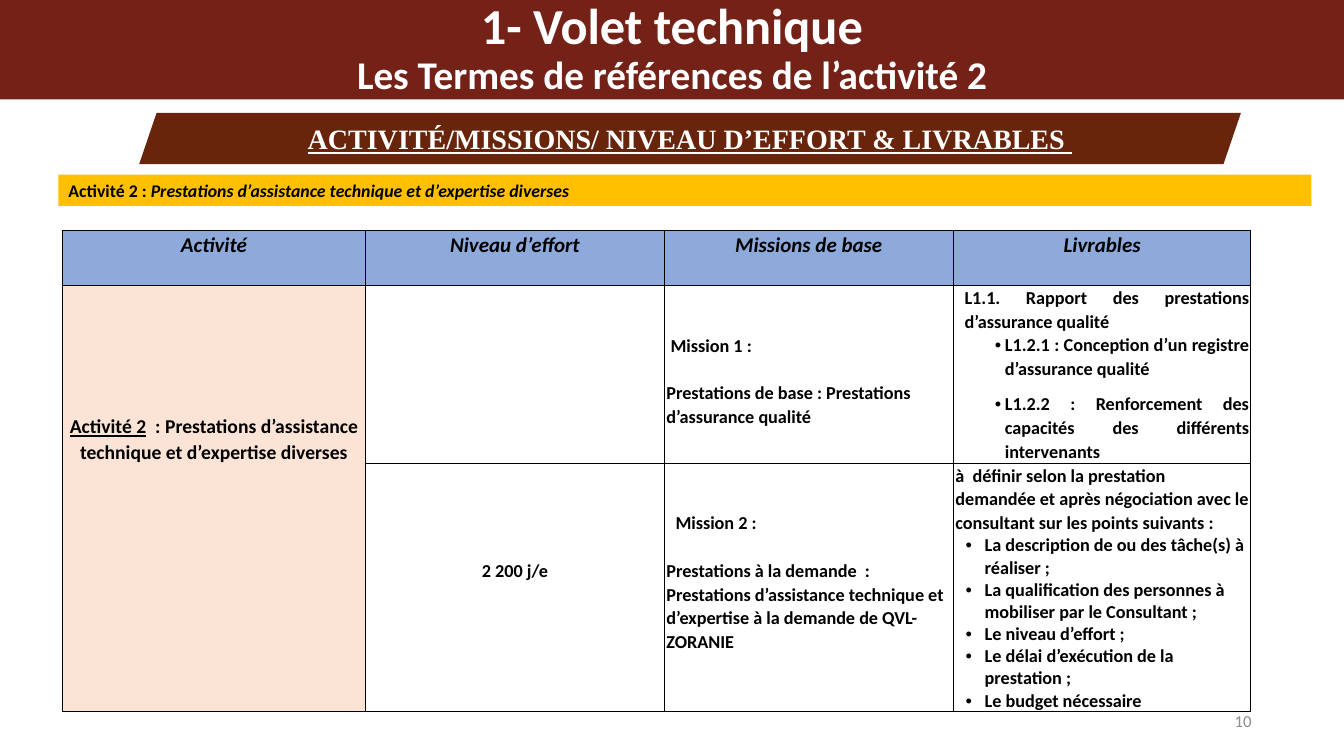
from lxml import etree
from pptx import Presentation
from pptx import util as u
from pptx.dml.color import RGBColor
from pptx.enum import shapes, text
from pptx.oxml import ns

Pt = u.Pt
WHITE = RGBColor(0xFF, 0xFF, 0xFF)
BLACK = RGBColor(0, 0, 0)
GREY = RGBColor(0x8C, 0x8C, 0x8C)
MAROON = RGBColor(0x74, 0x22, 0x17)
BROWN = RGBColor(0x69, 0x24, 0x0C)
AMBER = RGBColor(0xFF, 0xC0, 0x00)
BLUE = RGBColor(0x8E, 0xAA, 0xDB)
PEACH = RGBColor(0xFB, 0xE4, 0xD5)

LEFT = text.PP_ALIGN.LEFT
CENTER = text.PP_ALIGN.CENTER
RIGHT = text.PP_ALIGN.RIGHT
JUSTIFY = text.PP_ALIGN.JUSTIFY
RECTANGLE = shapes.MSO_SHAPE.RECTANGLE
PARALLELOGRAM = shapes.MSO_SHAPE.PARALLELOGRAM


class SlideBuilder:
    font = "Calibri"
    cell_spacing = 1.07

    def __init__(self, slide):
        self.slide = slide

    def para(self, frame, *runs, size=13, color=BLACK, bold=True, italic=False, font=None,
             align=LEFT, spacing=1.0, before=0, after=0, indent=0, hanging=0):
        """Append a paragraph; a run is a string or a (string, font settings) pair.

        A hanging indent also gives the paragraph a bullet.
        """
        first = frame.paragraphs[0]
        para = frame.add_paragraph() if first.runs else first
        para.alignment = align
        para.line_spacing = spacing
        para.space_before, para.space_after = Pt(before), Pt(after)
        props = para._p.get_or_add_pPr()
        props.set("marL", str(Pt(indent)))
        props.set("indent", str(Pt(-hanging)))
        if hanging:
            bullet_font = etree.SubElement(props, ns.qn("a:buFont"))
            bullet_font.set("typeface", "Arial")
            etree.SubElement(props, ns.qn("a:buChar")).set("char", "•")
        for run in runs:
            words, settings = (run, {}) if isinstance(run, str) else run
            span = para.add_run()
            span.text = words
            span.font.name = font or self.font
            span.font.size = Pt(size)
            span.font.bold = bold
            span.font.italic = italic
            span.font.color.rgb = color
            for name, value in settings.items():
                setattr(span.font, name, value)

    def bar(self, kind, left, top, width, height, color):
        """Add a filled shape without outline and return its text frame."""
        shape = self.slide.shapes.add_shape(kind, Pt(left), Pt(top), Pt(width), Pt(height))
        shape.shadow.inherit = False
        shape.fill.solid()
        shape.fill.fore_color.rgb = color
        shape.line.fill.background()
        if kind == PARALLELOGRAM:
            shape.adjustments[0] = 0.34
        frame = shape.text_frame
        frame.word_wrap = True
        frame.vertical_anchor = text.MSO_ANCHOR.MIDDLE
        return frame

    def label(self, left, top, width, height):
        box = self.slide.shapes.add_textbox(Pt(left), Pt(top), Pt(width), Pt(height))
        frame = box.text_frame
        frame.word_wrap = True
        frame.vertical_anchor = text.MSO_ANCHOR.MIDDLE
        frame.margin_left = frame.margin_right = frame.margin_top = frame.margin_bottom = 0
        return frame

    def table(self, left, top, widths, heights):
        holder = self.slide.shapes.add_table(len(heights), len(widths), Pt(left), Pt(top),
                                             Pt(sum(widths)), Pt(sum(heights)))
        table = holder.table
        table.first_row = table.horz_banding = False
        for column, width in zip(table.columns, widths):
            column.width = Pt(width)
        for row, height in zip(table.rows, heights):
            row.height = Pt(height)
        for cell in table.iter_cells():
            cell.margin_left = cell.margin_right = Pt(1.5)
            cell.margin_top = cell.margin_bottom = 0
            cell.fill.background()
            self.border(cell)
        return table

    def border(self, cell):
        props = cell._tc.get_or_add_tcPr()
        for place, side in enumerate(("lnL", "lnR", "lnT", "lnB")):
            line = etree.Element(ns.qn("a:" + side), w=str(Pt(1)))
            fill = etree.SubElement(line, ns.qn("a:solidFill"))
            etree.SubElement(fill, ns.qn("a:srgbClr")).set("val", str(BLACK))
            props.insert(place, line)

    def cell(self, cell, *runs, fill=None, top=None, **style):
        """Append a paragraph to a cell, optionally colouring it and pushing its text down."""
        if fill is not None:
            cell.fill.solid()
            cell.fill.fore_color.rgb = fill
        if top is not None:
            cell.margin_top = Pt(top)
        self.para(cell.text_frame, *runs, **{"spacing": self.cell_spacing, **style})


def add_headings(builder):
    title = builder.bar(RECTANGLE, 0, 0, 960, 71, MAROON)
    for words, size in (("1- Volet technique", 36),
                        ("Les Termes de références de l’activité 2", 28)):
        builder.para(title, words, size=size, color=WHITE, align=CENTER, spacing=0.9)

    banner = builder.bar(PARALLELOGRAM, 99.4, 80.6, 787, 36.7, BROWN)
    builder.para(banner, ("ACTIVITÉ/MISSIONS/ NIVEAU D’EFFORT & LIVRABLES ", {"underline": True}),
                 size=20, color=WHITE, font="Times New Roman", align=CENTER)

    activity = builder.bar(RECTANGLE, 41.8, 124.8, 895, 22.3, AMBER)
    builder.para(activity, "Activité 2 : ",
                 ("Prestations d’assistance technique et d’expertise diverses", {"italic": True}),
                 size=12.7)


def add_missions_table(builder):
    table = builder.table(44.6, 164.5, (216.5, 213.5, 206.5, 212.5), (39.5, 127, 177))
    headers = ("Activité", "Niveau d’effort", "Missions de base", "Livrables")
    for column, header in enumerate(headers):
        builder.cell(table.cell(0, column), header, fill=BLUE, size=15, italic=True, align=CENTER)

    activity = table.cell(1, 0)
    activity.merge(table.cell(2, 0))
    builder.cell(activity, ("Activité 2", {"underline": True}),
                 "  : Prestations d’assistance technique et d’expertise diverses",
                 fill=PEACH, top=91.5, size=14, align=CENTER)
    builder.cell(table.cell(2, 1), "2 200 j/e", top=68, align=CENTER)

    missions = (
        ("Mission 1 :", 3, "Prestations de base : Prestations d’assurance qualité"),
        ("Mission 2 :", 6.5, "Prestations à la demande  : Prestations d’assistance technique et "
                             "d’expertise à la demande de QVL-ZORANIE"),
    )
    for row, (name, indent, content) in enumerate(missions, start=1):
        builder.cell(table.cell(row, 2), name, top=34, indent=indent)
        builder.cell(table.cell(row, 2), content, before=17)

    quality = table.cell(1, 3)
    builder.cell(quality, "L1.1. Rapport des prestations d’assurance qualité",
                 align=JUSTIFY, indent=6.5)
    for words in ("L1.2.1 : Conception d’un registre d’assurance qualité",
                  "L1.2.2 : Renforcement des capacités des différents intervenants"):
        builder.cell(quality, words, align=JUSTIFY, indent=35.3, hanging=7.2, after=8)

    on_demand = table.cell(2, 3)
    builder.cell(on_demand, "à  définir selon la prestation demandée et après négociation avec "
                            "le consultant sur les points suivants :")
    for words in ("La description de ou des tâche(s) à réaliser ;",
                  "La qualification des personnes à mobiliser par le Consultant ;",
                  "Le niveau d’effort ;",
                  "Le délai d’exécution de la prestation ;",
                  "Le budget nécessaire"):
        builder.cell(on_demand, words, spacing=1.0, indent=20.9, hanging=13.7)


def main():
    deck = Presentation()
    deck.slide_width, deck.slide_height = Pt(960), Pt(540)
    builder = SlideBuilder(deck.slides.add_slide(deck.slide_layouts[6]))
    page_number = builder.label(678, 500.5, 216, 28.8)
    builder.para(page_number, "10", size=12, color=GREY, bold=False, align=RIGHT)
    add_headings(builder)
    add_missions_table(builder)
    deck.save("out.pptx")


if __name__ == "__main__":
    main()
